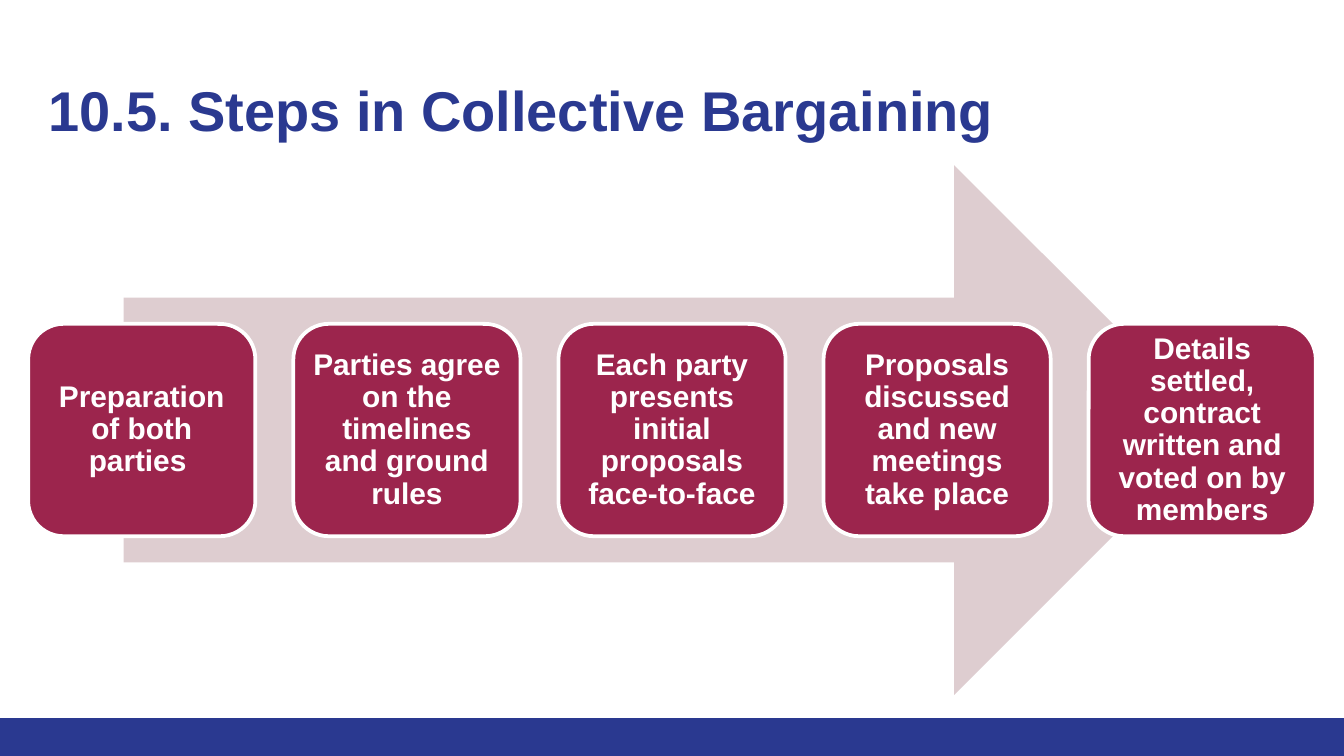
from pptx import Presentation
from pptx import util as u
from pptx.dml.color import RGBColor
from pptx.enum import shapes, text

NAVY = RGBColor(0x2A, 0x39, 0x90)
WINE = RGBColor(0x9C, 0x25, 0x4D)
ROSE = RGBColor(0xDE, 0xCD, 0xD0)
WHITE = RGBColor(0xFF, 0xFF, 0xFF)
STEPS = [
    "Preparation of both parties ",
    "Parties agree on the timelines and ground rules",
    "Each party presents initial proposals face-to-face",
    "Proposals discussed and new meetings take place",
    "Details settled, contract written and voted on by members",
]
# Slide of 16 to 9, and a column grid with equal margins, in inches
WIDTH, HEIGHT = 10, 10 * 9 / 16
MARGIN, BOX_WIDTH = 0.21, 1.69
STEP = (WIDTH - 2 * MARGIN - BOX_WIDTH) / (len(STEPS) - 1)
BAND = HEIGHT / 20


def add_box(page, kind, place, fill):
    box = page.shapes.add_shape(kind, *[u.Inches(length) for length in place])
    box.shadow.inherit = False
    box.fill.solid()
    box.fill.fore_color.rgb = fill
    box.line.fill.background()
    return box


def write(box, words, inset, size, color, frame_format, para_format):
    frame = box.text_frame
    frame.text = words
    for side in ("left", "top", "right", "bottom"):
        setattr(frame, "margin_" + side, u.Inches(inset))
    para = frame.paragraphs[0]
    font_format = {"name": "Arial", "size": u.Pt(size), "bold": True}
    for target, values in ((frame, frame_format), (para, para_format),
                           (para.font, font_format)):
        for name, value in values.items():
            setattr(target, name, value)
    para.font.color.rgb = color


deck = Presentation()
deck.slide_width, deck.slide_height = u.Inches(WIDTH), u.Inches(HEIGHT)
page = deck.slides.add_slide(deck.slide_layouts[5])

# Footer band
add_box(page, shapes.MSO_SHAPE.RECTANGLE,
        (0, HEIGHT - BAND, WIDTH, BAND), NAVY)

# Title
title = page.shapes.title
title_place = {"left": 0.26, "top": 0.46, "width": 9.35, "height": 1.02}
for name, length in title_place.items():
    setattr(title, name, u.Inches(length))
write(title, "10.5. Steps in Collective Bargaining", 0.1, 30, NAVY,
      {"vertical_anchor": text.MSO_ANCHOR.TOP, "word_wrap": True,
       "auto_size": text.MSO_AUTO_SIZE.NONE},
      {"alignment": text.PP_ALIGN.LEFT})

# Arrow behind the steps
add_box(page, shapes.MSO_SHAPE.RIGHT_ARROW, (0.92, 1.23, 8.15, 3.94), ROSE)

# Steps, one per column
for column, words in enumerate(STEPS):
    box = add_box(page, shapes.MSO_SHAPE.ROUNDED_RECTANGLE,
                  (MARGIN + column * STEP, 2.41, BOX_WIDTH, 1.58), WINE)
    box.line.color.rgb = WHITE
    box.line.width = u.Pt(2)
    write(box, words, 0.07, 16, WHITE,
          {"vertical_anchor": text.MSO_ANCHOR.MIDDLE, "word_wrap": True},
          {"alignment": text.PP_ALIGN.CENTER, "line_spacing": 0.9})

deck.save("out.pptx")
